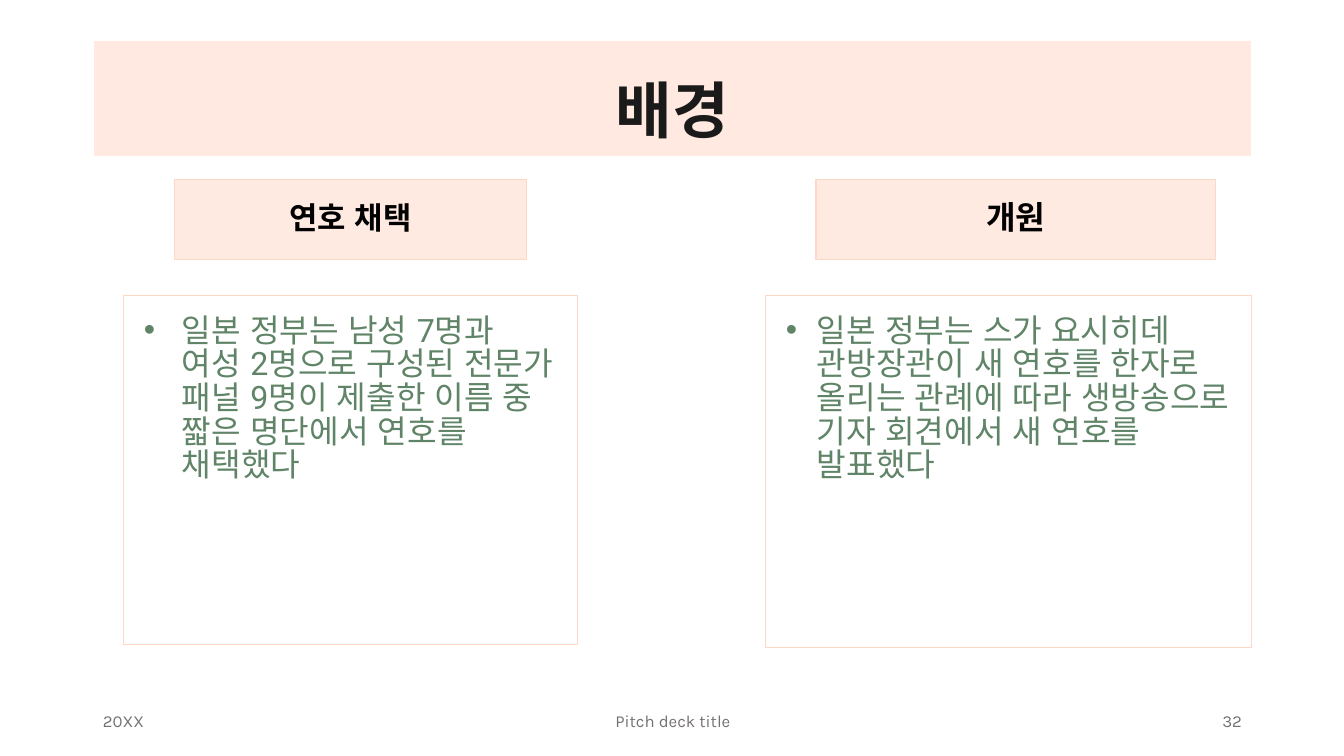
from dataclasses import dataclass

from pptx import Presentation
from pptx.dml.color import RGBColor
from pptx.enum.lang import MSO_LANGUAGE_ID as LANG
from pptx.enum.shapes import MSO_SHAPE as SHAPE
from pptx.enum.text import MSO_ANCHOR as ANCHOR, PP_ALIGN as ALIGN
from pptx.oxml.ns import qn
from pptx.util import Pt
from lxml.etree import SubElement

EMU_PER_PX = 914400 / 100.8


def px(n):
    return round(n * EMU_PER_PX)


@dataclass(frozen=True)
class Theme:
    band: str = "FFE9E0"
    accent: str = "FFD7C7"
    white: str = "FFFFFF"
    title: str = "1A1A1A"
    heading: str = "000000"
    body: str = "608467"
    footer: str = "767171"
    title_font: str = "Karla"
    body_font: str = "Roboto"
    title_size: int = 44
    body_size: int = 23
    footer_size: int = 12
    leading: int = 24


class Deck:
    def __init__(self, theme, width, height):
        self.theme = theme
        self.prs = Presentation()
        self.prs.slide_width, self.prs.slide_height = px(width), px(height)
        self.s = self.prs.slides.add_slide(self.prs.slide_layouts[6])

    def frame(self, sp, anchor, insets=(10, 5, 10, 5)):
        tf = sp.text_frame
        tf.word_wrap = True
        tf.vertical_anchor = anchor
        tf.margin_left, tf.margin_top, tf.margin_right, tf.margin_bottom = map(px, insets)
        return tf.paragraphs[0]

    def run(self, p, text, font, size, color, bold=False, lang=LANG.KOREAN):
        r = p.add_run()
        r.text = text
        r.font.name, r.font.size, r.font.bold = font, Pt(size), bold
        r.font.color.rgb = RGBColor.from_string(color)
        r.font.language_id = lang

    def rect(self, box, line, weight, fill=None, alpha=None):
        sp = self.s.shapes.add_shape(SHAPE.RECTANGLE, *map(px, box))
        sp.shadow.inherit = False
        sp.line.color.rgb = RGBColor.from_string(line)
        sp.line.width = Pt(weight)
        if fill is None:
            sp.fill.background()
            return sp
        sp.fill.solid()
        sp.fill.fore_color.rgb = RGBColor.from_string(fill)
        if alpha:
            clr = sp.fill._xPr.find(qn("a:solidFill")).find(qn("a:srgbClr"))
            SubElement(clr, qn("a:alpha"), val=str(alpha * 1000))
        return sp

    def title(self, text, box):
        t = self.theme
        p = self.frame(self.rect(box, t.white, 1.5, t.band), ANCHOR.BOTTOM, (10, 5, 10, 10))
        p.alignment, p.line_spacing = ALIGN.CENTER, 0.9
        self.run(p, text, t.title_font, t.title_size, t.title, True)

    def heading(self, text, box, size):
        t = self.theme
        p = self.frame(self.rect(box, t.accent, 0.75, t.accent, 50), ANCHOR.MIDDLE)
        p.alignment, p.line_spacing, p.space_before = ALIGN.CENTER, 0.9, Pt(10)
        self.run(p, text, t.body_font, size, t.heading, True)

    def panel(self, text, box, indent):
        t = self.theme
        p = self.frame(self.rect(box, t.accent, 0.75), ANCHOR.TOP, (20, 20, 20, 5))
        p.alignment, p.line_spacing = ALIGN.LEFT, Pt(t.leading)
        pPr = p._p.get_or_add_pPr()
        pPr.set("marL", str(px(indent)))
        pPr.set("indent", str(-px(indent)))
        SubElement(pPr, qn("a:buFont"), typeface="Arial")
        SubElement(pPr, qn("a:buChar"), char="•")
        self.run(p, text, t.body_font, t.body_size, t.body)

    def footer(self, text, box, align):
        t = self.theme
        p = self.frame(self.s.shapes.add_textbox(*map(px, box)), ANCHOR.MIDDLE)
        p.alignment = align
        self.run(p, text, t.title_font, t.footer_size, t.footer, lang=LANG.ENGLISH_US)


COLUMNS = [
    ("연호 채택", (174, 179, 353, 81), 22,
     "일본 정부는 남성 7명과 여성 2명으로 구성된 전문가 패널 9명이 제출한 "
     "이름 중 짧은 명단에서 연호를 채택했다", (124, 295, 454, 350), 38),
    ("개원", (816, 179, 400, 81), 23,
     "일본 정부는 스가 요시히데 관방장관이 새 연호를 한자로 올리는 관례에 따라 "
     "생방송으로 기자 회견에서 새 연호를 발표했다", (766, 295, 486, 353), 31),
]
FOOTERS = [
    ("20XX", 93, 302, ALIGN.LEFT),
    ("Pitch deck title", 446, 454, ALIGN.CENTER),
    ("32", 950, 302, ALIGN.RIGHT),
]


def main():
    deck = Deck(Theme(), 1344, 756)
    deck.title("배경", (93, 40, 1159, 117))
    for heading, head_box, size, body, body_box, indent in COLUMNS:
        deck.heading(heading, head_box, size)
        deck.panel(body, body_box, indent)
    for text, left, width, align in FOOTERS:
        deck.footer(text, (left, 701, width, 40), align)
    deck.prs.save("out.pptx")


if __name__ == "__main__":
    main()
